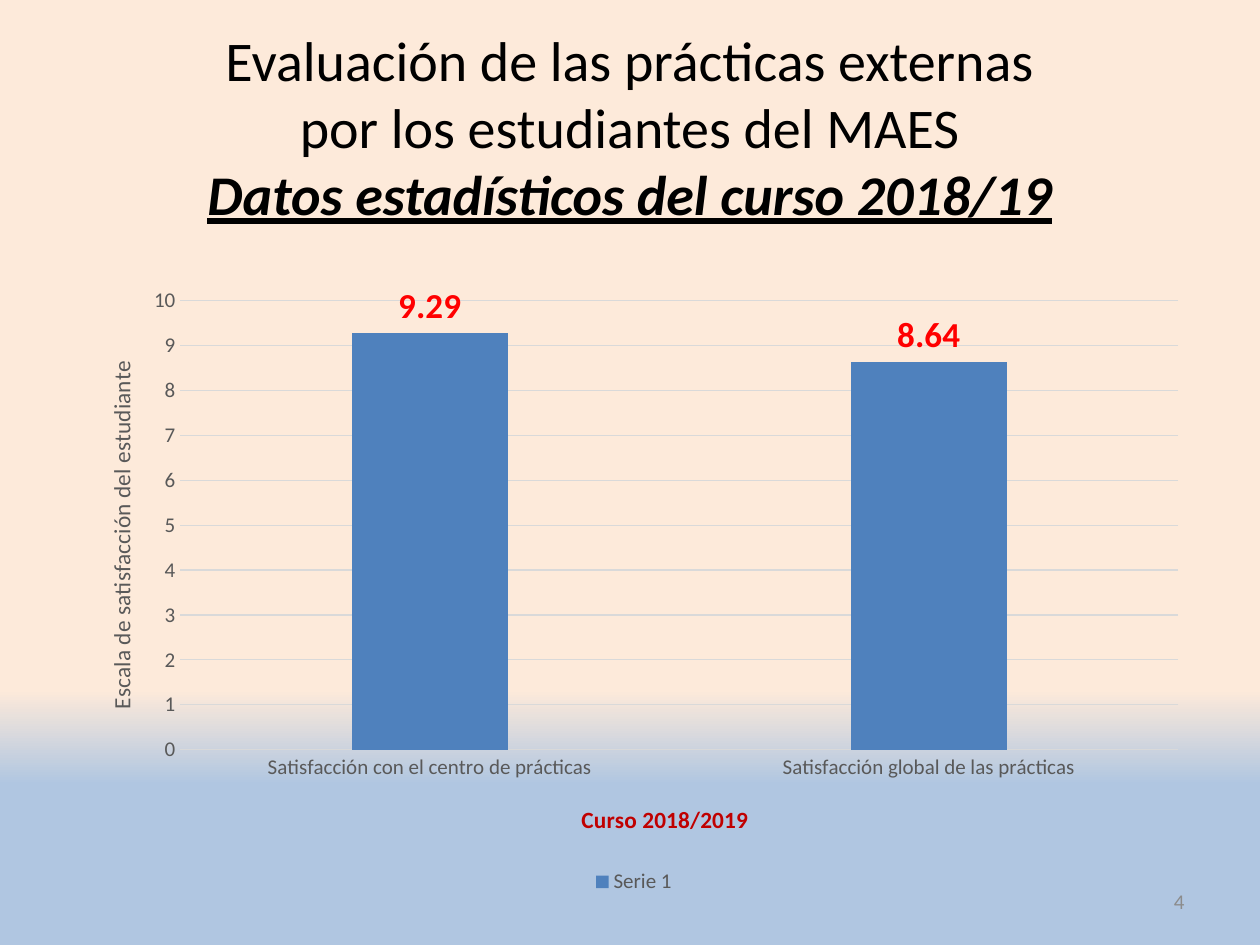
from typing import NamedTuple

from lxml.etree import SubElement
from pptx import Presentation
from pptx.chart.data import CategoryChartData
from pptx.dml.color import RGBColor
from pptx.enum.chart import XL_CHART_TYPE, XL_LABEL_POSITION, XL_LEGEND_POSITION, XL_TICK_MARK
from pptx.enum.text import MSO_ANCHOR, PP_ALIGN
from pptx.oxml.ns import qn
from pptx.util import Cm, Pt

FONT = "Calibri"
COLORS = {
    "black": "000000", "page_number": "8C8C8C", "axis_text": "595959",
    "grid": "D9D9D9", "bar": "4F81BD", "value": "FF0000", "course": "C00000",
    "cream": "FDEADA", "blue": "B0C6E1", "pale_blue": "CAD9EB",
}


class Box(NamedTuple):
    left: float
    top: float
    width: float
    height: float

    def lengths(self) -> list:
        return [Cm(value) for value in self]


class AxisTitle(NamedTuple):
    text: str
    color: str
    bold: bool
    left: float  # fractions of the chart area
    top: float


class GradientStop(NamedTuple):
    percent: int
    color: str


def rgb(name: str) -> RGBColor:
    return RGBColor.from_string(COLORS[name])


def style_font(font, size: float, color: str, bold: bool = False) -> None:
    font.name, font.size, font.bold = FONT, Pt(size), bold
    font.color.rgb = rgb(color)


def add_text_box(slide, box: Box, alignment):
    """Add a wrapped, vertically centred text box and return its paragraph."""
    frame = slide.shapes.add_textbox(*box.lengths()).text_frame
    frame.word_wrap = True
    frame.vertical_anchor = MSO_ANCHOR.MIDDLE
    paragraph = frame.paragraphs[0]
    paragraph.alignment = alignment
    return paragraph


def add_run(paragraph, text: str, size: float, color: str, emphasis: bool = False) -> None:
    run = paragraph.add_run()
    run.text = text
    style_font(run.font, size, color, emphasis)
    run.font.italic = run.font.underline = emphasis


def set_background(slide, stops: list[GradientStop]) -> None:
    fill = slide.background.fill
    fill.gradient()
    fill.gradient_angle = 270
    stop_list = next(slide.element.iter(qn("a:gsLst")))
    for old_stop in list(stop_list):
        stop_list.remove(old_stop)
    for stop in stops:
        element = SubElement(stop_list, qn("a:gs"), pos=str(stop.percent * 1000))
        SubElement(element, qn("a:srgbClr"), val=COLORS[stop.color])


def set_layout(element, **settings) -> None:
    """Place a chart part by fractions of the chart area."""
    layout = element.find(qn("c:layout"))
    if layout is None:
        layout = element.makeelement(qn("c:layout"))
        text = element.find(qn("c:tx"))
        element.insert(0 if text is None else element.index(text) + 1, layout)
    for child in list(layout):
        layout.remove(child)
    manual = SubElement(layout, qn("c:manualLayout"))
    for tag, value in settings.items():
        SubElement(manual, qn(f"c:{tag}"), val=str(value))


def style_axis(axis, title: AxisTitle) -> None:
    axis.major_tick_mark = axis.minor_tick_mark = XL_TICK_MARK.NONE
    style_font(axis.tick_labels.font, 12, "axis_text")
    paragraph = axis.axis_title.text_frame.paragraphs[0]
    run = paragraph.add_run()
    run.text = title.text
    style_font(run.font, 13.3, title.color, title.bold)
    set_layout(axis.axis_title._element, xMode="edge", yMode="edge",
               x=title.left, y=title.top)


def style_line(line) -> None:
    line.color.rgb = rgb("grid")
    line.width = Pt(0.75)


def add_satisfaction_chart(slide, box: Box) -> None:
    data = CategoryChartData()
    data.categories = ["Satisfacción con el centro de prácticas",
                       "Satisfacción global de las prácticas"]
    data.add_series("Serie 1", [9.29, 8.64])
    chart = slide.shapes.add_chart(
        XL_CHART_TYPE.COLUMN_CLUSTERED, *box.lengths(), data).chart
    style_font(chart.font, 10, "black")
    chart.has_title = False

    # Axes and grid
    style_axis(chart.category_axis,
               AxisTitle("Curso 2018/2019", "course", True, 0.45, 0.84))
    style_line(chart.category_axis.format.line)
    value_axis = chart.value_axis
    style_axis(value_axis, AxisTitle("Escala de satisfacción del estudiante",
                                     "axis_text", False, 0.03, 0.13))
    value_axis.minimum_scale, value_axis.maximum_scale = 0, 10
    value_axis.major_unit = 1
    value_axis.format.line.fill.background()
    style_line(value_axis.major_gridlines.format.line)
    plot_area = next(chart.element.iter(qn("c:plotArea")))
    set_layout(plot_area, layoutTarget="inner", xMode="edge", yMode="edge",
               x=0.1, y=0.04, w=0.88, h=0.72)

    # Columns and their values
    plot = chart.plots[0]
    plot.vary_by_categories = False
    plot.gap_width, plot.overlap = 219, -27
    series = plot.series[0]
    series.format.fill.solid()
    series.format.fill.fore_color.rgb = rgb("bar")
    labels = series.data_labels
    labels.show_value = True
    labels.position = XL_LABEL_POSITION.OUTSIDE_END
    style_font(labels.font, 20, "value", bold=True)

    # Legend
    chart.has_legend = True
    chart.legend.position = XL_LEGEND_POSITION.BOTTOM
    chart.legend.include_in_layout = False
    style_font(chart.legend.font, 12, "axis_text")


def main() -> None:
    presentation = Presentation()
    presentation.slide_width, presentation.slide_height = Cm(25.4), Cm(19.05)
    slide = presentation.slides.add_slide(presentation.slide_layouts[6])
    set_background(slide, [GradientStop(73, "cream"), GradientStop(83, "blue"),
                           GradientStop(100, "blue"), GradientStop(100, "pale_blue")])

    # Title
    title = add_text_box(slide, Box(1.27, 0.76, 22.86, 3.56), PP_ALIGN.CENTER)
    for line in ("Evaluación de las prácticas externas", "por los estudiantes del MAES"):
        add_run(title, line, 32, "black")
        title.add_line_break()
    add_run(title, "Datos estadísticos del curso 2018/19", 32, "black", emphasis=True)

    # Page number
    page_number = add_text_box(slide, Box(18.2, 17.66, 5.93, 1.01), PP_ALIGN.RIGHT)
    add_run(page_number, "4", 12, "page_number")

    # Chart
    add_satisfaction_chart(slide, Box(1.35, 5.56, 22.86, 12.57))
    presentation.save("out.pptx")


if __name__ == "__main__":
    main()
